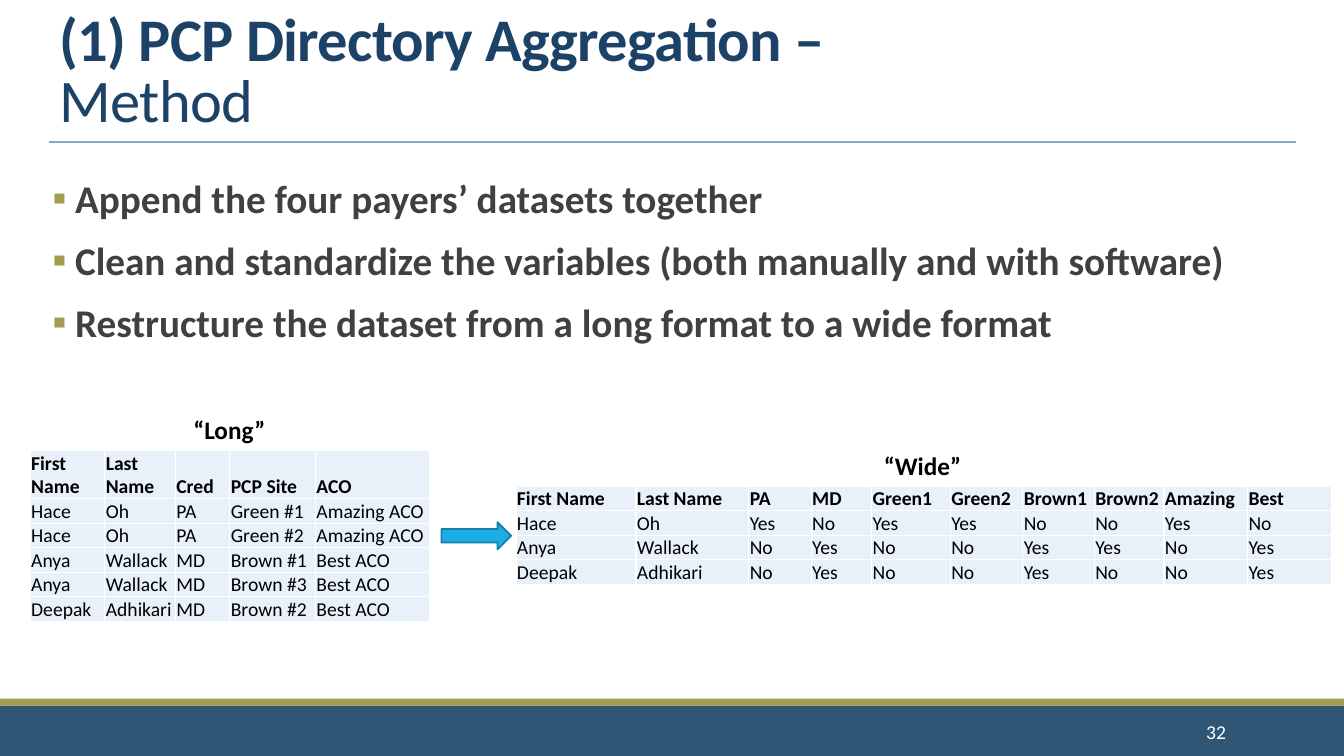
"""Build the slide on the method of directory aggregation."""
import pptx
import pptx.dml.color
import pptx.enum.shapes
import pptx.enum.text
import pptx.oxml
import pptx.oxml.ns
import pptx.util

Pt = pptx.util.Pt
Shape = pptx.enum.shapes.MSO_SHAPE
Align = pptx.enum.text.PP_ALIGN
Anchor = pptx.enum.text.MSO_ANCHOR
NS = pptx.oxml.ns.nsdecls("a")
HEX = {
    "navy": "2F5674", "gold": "A39B4E", "rule": "7EA9CA", "title": "1D4268",
    "body": "404040", "black": "000000", "white": "FFFFFF", "cell": "E8F1FA",
    "arrow": "1CADE4", "edge": "1580A9",
}

POINTS = [
    " Append the four payers’ datasets together",
    " Clean and standardize the variables (both manually and with software)",
    " Restructure the dataset from a long format to a wide format",
]
LONG = [
    ["First Name", "Last Name", "Cred", "PCP Site", "ACO"],
    ["Hace", "Oh", "PA", "Green #1", "Amazing ACO"],
    ["Hace", "Oh", "PA", "Green #2", "Amazing ACO"],
    ["Anya", "Wallack", "MD", "Brown #1", "Best ACO"],
    ["Anya", "Wallack", "MD", "Brown #3", "Best ACO"],
    ["Deepak", "Adhikari", "MD", "Brown #2", "Best ACO"],
]
WIDE = [
    ["First Name", "Last Name", "PA", "MD", "Green1", "Green2",
     "Brown1", "Brown2", "Amazing", "Best"],
    ["Hace", "Oh", "Yes", "No", "Yes", "Yes", "No", "No", "Yes", "No"],
    ["Anya", "Wallack", "No", "Yes", "No", "No", "Yes", "Yes", "No", "Yes"],
    ["Deepak", "Adhikari", "No", "Yes", "No", "No", "Yes", "No", "No", "Yes"],
]


def color(name):
    return pptx.dml.color.RGBColor.from_string(HEX[name])


def write(para, text, size=14, ink="black", bold=False, align=Align.LEFT, space=0):
    para.alignment = align
    run = para.add_run()
    run.text = text
    font = run.font
    font.name, font.size, font.bold = "Calibri", Pt(size), bold
    font.color.rgb = color(ink)
    if space:
        run._r.get_or_add_rPr().set("spc", str(space))


class Page:
    def __init__(self, slide, face):
        self.slide = slide
        self.face = face

    def place(self, item, box):
        item.left, item.top, item.width, item.height = map(Pt, box)

    def shape(self, kind, box, fill, edge=None):
        item = self.slide.shapes.add_shape(kind, *map(Pt, box))
        item.shadow.inherit = False
        item.fill.solid()
        item.fill.fore_color.rgb = color(fill)
        if edge:
            item.line.color.rgb = color(edge)
            item.line.width = Pt(1.25)
        else:
            item.line.fill.background()

    def rule(self, left, right, top):
        line = self.slide.shapes.add_connector(
            pptx.enum.shapes.MSO_CONNECTOR.STRAIGHT,
            Pt(left), Pt(top), Pt(right), Pt(top))
        line.line.color.rgb = color("rule")
        line.line.width = Pt(1)
        line._element.spPr.append(pptx.oxml.parse_xml(f"<a:effectLst {NS}/>"))

    def title(self, box, head, tail):
        item = self.slide.shapes.title
        self.place(item, box)
        frame = item.text_frame
        frame.auto_size = pptx.enum.text.MSO_AUTO_SIZE.NONE
        frame.vertical_anchor = Anchor.BOTTOM
        para = frame.paragraphs[0]
        para.line_spacing = 0.85
        look = dict(size=43.2, ink="title", space=-50)
        write(para, head, bold=True, **look)
        para.add_line_break()
        write(para, tail, **look)

    def bullets(self, box, lines):
        item = self.slide.placeholders[1]
        self.place(item, box)
        frame = item.text_frame
        frame.auto_size = pptx.enum.text.MSO_AUTO_SIZE.NONE
        frame.margin_left = frame.margin_right = 0
        for row, text in enumerate(lines):
            para = frame.add_paragraph() if row else frame.paragraphs[0]
            para.line_spacing = 0.9
            para.space_before, para.space_after = Pt(12), Pt(2)
            write(para, text, size=28, ink="body", bold=True)
            props = para._p.get_or_add_pPr()
            props.set("marL", str(Pt(7.2)))
            props.set("indent", str(-Pt(7.2)))
            for part in (
                f'<a:buClr {NS}><a:srgbClr val="{HEX["gold"]}"/></a:buClr>',
                f'<a:buFont {NS} typeface="{self.face}"/>',
                f'<a:buChar {NS} char="▪"/>',
            ):
                props.append(pptx.oxml.parse_xml(part))

    def label(self, box, text, anchor=Anchor.TOP, **look):
        frame = self.slide.shapes.add_textbox(*map(Pt, box)).text_frame
        frame.word_wrap = True
        frame.vertical_anchor = anchor
        write(frame.paragraphs[0], text, **look)

    def cell(self, cell, text, bold):
        cell.margin_left = cell.margin_right = cell.margin_top = Pt(0.7)
        cell.margin_bottom = 0
        cell.vertical_anchor = Anchor.BOTTOM
        write(cell.text_frame.paragraphs[0], text, bold=bold)
        props = cell._tc.get_or_add_tcPr()
        for side in "LRTB":
            props.append(pptx.oxml.parse_xml(
                f'<a:ln{side} {NS} w="{Pt(1)}"><a:solidFill>'
                f'<a:srgbClr val="{HEX["white"]}"/></a:solidFill></a:ln{side}>'))
        cell.fill.solid()
        cell.fill.fore_color.rgb = color("cell")

    def table(self, left, top, widths, head, data):
        step = 17.3
        high = head + step * (len(data) - 1)
        table = self.slide.shapes.add_table(
            len(data), len(widths), Pt(left), Pt(top), Pt(sum(widths)), Pt(high)).table
        table.first_row = table.horz_banding = False
        for col, width in zip(table.columns, widths):
            col.width = Pt(width)
        for r, texts in enumerate(data):
            table.rows[r].height = Pt(step if r else head)
            for c, text in enumerate(texts):
                self.cell(table.cell(r, c), text, r == 0)


def main():
    deck = pptx.Presentation()
    deck.slide_width, deck.slide_height = Pt(960), Pt(540)
    page = Page(deck.slides.add_slide(deck.slide_layouts[1]), "Calibri")
    page.shape(Shape.RECTANGLE, (0, 504, 960, 36), "navy")
    page.shape(Shape.RECTANGLE, (0, 499, 960, 5), "gold")
    page.rule(35.3, 925.9, 101.5)
    page.title((35.5, 22.3, 890.6, 77.8), "(1) PCP Directory Aggregation – ", "Method")
    page.bullets((37.5, 124.6, 890.6, 378.7), POINTS)
    page.label((779.8, 508.3, 103, 28.8), "32", Anchor.MIDDLE,
               ink="white", align=Align.RIGHT)
    page.table(21.6, 321.8, [53.3, 50.4, 38.9, 61.2, 81.4], 34.5, LONG)
    page.table(368.6, 347.2,
               [85.7, 80.6, 44.6, 43.2, 56.2, 51.8, 51.1, 49.7, 59.8, 59.8], 17.3, WIDE)
    page.shape(Shape.RIGHT_ARROW, (315.4, 373, 49.7, 19.4), "arrow", "edge")
    page.label((131, 292.3, 66.2, 28.8), "“Long”", size=18, bold=True)
    page.label((624.2, 318.2, 70.6, 28.8), "“Wide”", size=18, bold=True)
    deck.save("out.pptx")


if __name__ == "__main__":
    main()
